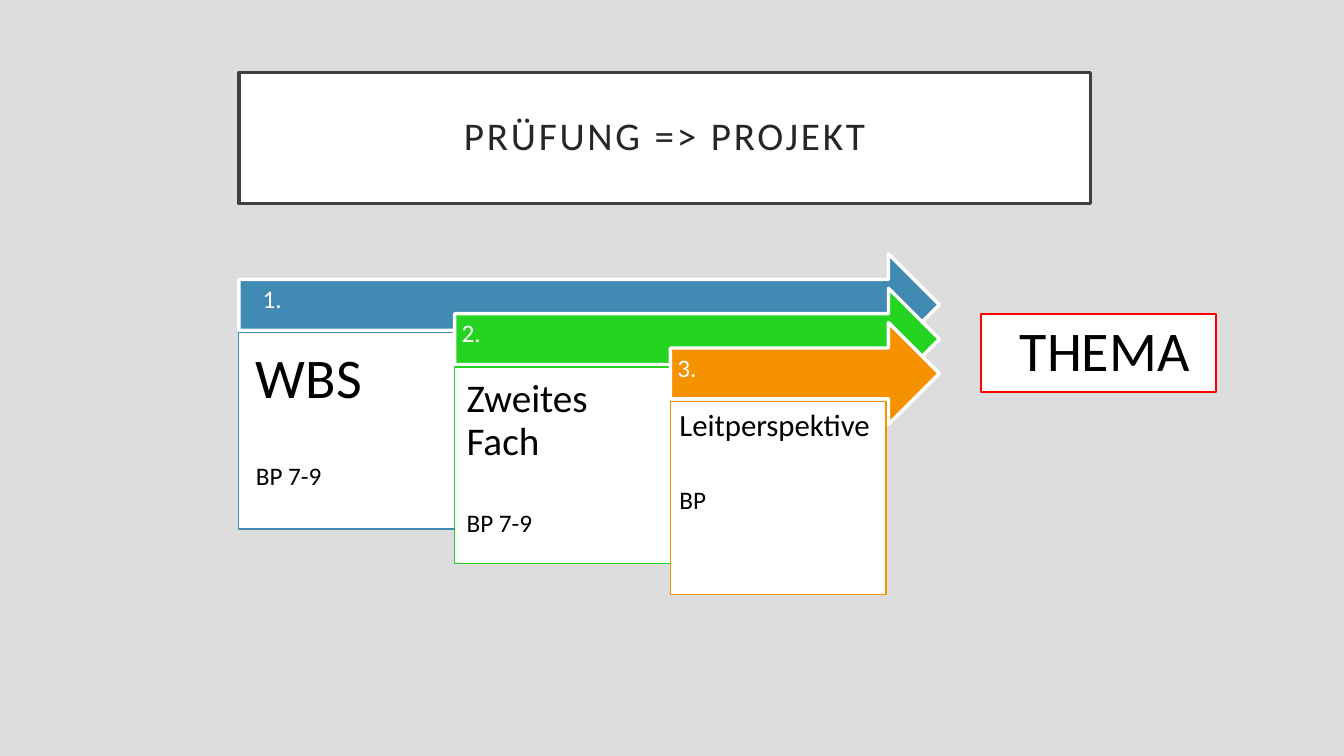
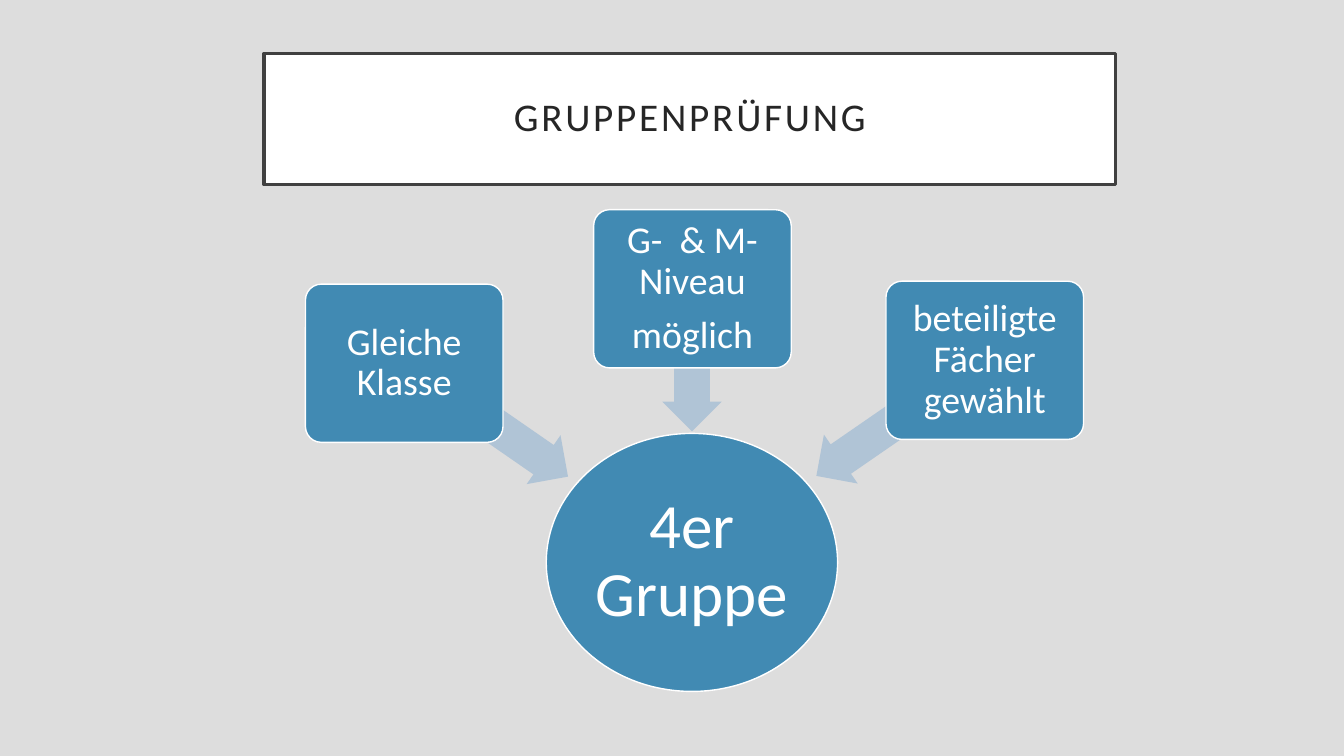
"""Build two slides about a school project exam: choosing the topic and forming the group."""
import pptx
import pptx.dml.color
import pptx.enum.shapes
import pptx.enum.text
import pptx.util

Pt = pptx.util.Pt
RGBColor = pptx.dml.color.RGBColor
SHAPE = pptx.enum.shapes.MSO_SHAPE
ALIGN = pptx.enum.text.PP_ALIGN
ANCHOR = pptx.enum.text.MSO_ANCHOR

GREY = RGBColor(0xDD, 0xDD, 0xDD)
WHITE = RGBColor(0xFF, 0xFF, 0xFF)
BLACK = RGBColor(0x00, 0x00, 0x00)
FRAME = RGBColor(0x40, 0x40, 0x40)
INK = RGBColor(0x26, 0x26, 0x26)
BLUE = RGBColor(0x41, 0x8A, 0xB3)
GREEN = RGBColor(0x25, 0xD4, 0x21)
ORANGE = RGBColor(0xF6, 0x92, 0x00)
RED = RGBColor(0xFF, 0x00, 0x00)
PALE_BLUE = RGBColor(0xB0, 0xC4, 0xD6)

FONT = "Calibri"
PARAGRAPH_GAP = 0.35


def add_block(page, kind, area, fill, line=None, line_width=1, adjustments=()):
    """Add a flat shape with the given fill and outline."""
    block = page.shapes.add_shape(kind, *map(Pt, area))
    block.shadow.inherit = False
    block.fill.solid()
    block.fill.fore_color.rgb = fill
    if line is None:
        block.line.fill.background()
    else:
        block.line.color.rgb = line
        block.line.width = Pt(line_width)
    for index, value in enumerate(adjustments):
        block.adjustments[index] = value
    return block


def write(block, lines, color, insets, align=ALIGN.CENTER, anchor=ANCHOR.MIDDLE, tracking=None):
    """Write (text, size, space before) lines into a shape; insets run left, top, right, bottom."""
    frame = block.text_frame
    left, top, right, bottom = map(Pt, insets)
    frame_format = {
        "word_wrap": True, "vertical_anchor": anchor, "margin_left": left,
        "margin_top": top, "margin_right": right, "margin_bottom": bottom,
    }
    for name, value in frame_format.items():
        setattr(frame, name, value)
    for index, (text, size, gap) in enumerate(lines):
        para = frame.add_paragraph() if index else frame.paragraphs[0]
        para_format = {"alignment": align, "line_spacing": 0.9, "space_before": Pt(gap)}
        for name, value in para_format.items():
            setattr(para, name, value)
        span = para.add_run()
        span.text = text
        span.font.color.rgb = color
        for name, value in {"name": FONT, "size": Pt(size)}.items():
            setattr(span.font, name, value)
        if tracking:
            span.font._element.set("spc", str(tracking))


deck = pptx.Presentation()
deck.slide_width, deck.slide_height = Pt(960), Pt(540)

pages = []
for title, left, top in [("PRÜFUNG => PROJEKT", 170.6, 51.8), ("GRUPPENPRÜFUNG", 188.6, 38.2)]:
    page = deck.slides.add_slide(deck.slide_layouts[6])
    page.background.fill.solid()
    page.background.fill.fore_color.rgb = GREY
    box = add_block(page, SHAPE.RECTANGLE, (left, top, 608.4, 93.6), WHITE, FRAME, 2.5)
    write(box, [(title, 28, 0)], INK, [14.4] * 4, tracking=200)
    pages.append(page)
topic_page, group_page = pages

STEP_LEFT, STEP_TOP, STEP_WIDTH, STEP_DROP = 170.6, 181.4, 154.1, 24.5
ARROW_END, ARROW_HEIGHT, CARD_OFFSET = 671, 72.7, 56.2
steps = [
    ("WBS", 40, "BP 7-9", BLUE, 140.4, 12.2, 17),
    ("Zweites Fach", 28, "BP 7-9", GREEN, 140.4, 8.6, 5),
    ("Leitperspektive", 22, "BP", ORANGE, 138.2, 6.5, 5),
]
for index, (subject, size, plan, color, card_height, inset, indent) in enumerate(steps):
    left = STEP_LEFT + index * STEP_WIDTH
    top = STEP_TOP + index * STEP_DROP
    arrow_area = (left, top, ARROW_END - left, ARROW_HEIGHT)
    arrow = add_block(topic_page, SHAPE.RIGHT_ARROW, arrow_area, color, WHITE, 2.5)
    write(arrow, [(f"{index + 1}.", 18, 0)], WHITE, (indent, 5, 20, 11.5), ALIGN.LEFT)
    card_area = (left, top + CARD_OFFSET, STEP_WIDTH, card_height)
    card = add_block(topic_page, SHAPE.RECTANGLE, card_area, WHITE, color)
    card_lines = [(subject, size, 0), (plan, 18, 24 + PARAGRAPH_GAP * size)]
    write(card, card_lines, BLACK, [inset] * 4, ALIGN.LEFT, ANCHOR.TOP)

topic = add_block(topic_page, SHAPE.RECTANGLE, (700.6, 224.6, 167.8, 55.4), WHITE, RED, 1.5)
write(topic, [("THEMA", 40, 0)], BLACK, (16.2, 3.6, 7.2, 3.6))

hub = add_block(group_page, SHAPE.OVAL, (390.2, 309.6, 208.1, 184.3), BLUE, WHITE)
write(hub, [("4er Gruppe", 45, 0)], WHITE, [2.2] * 4)

conditions = [
    (["Gleiche Klasse"], 218.2, 203, (275.8, 278.6, 142.6), 214.7),
    (["G-  & M- Niveau", "möglich"], 424.1, 149.8, (445.7, 238.3, 97.2), 270),
    (["beteiligte Fächer gewählt"], 632.9, 200.9, (570.2, 277.2, 146.2), 325.4),
]
for texts, left, top, (arrow_left, arrow_top, arrow_width), angle in conditions:
    arrow_area = (arrow_left, arrow_top, arrow_width, 42.5)
    arrow = add_block(group_page, SHAPE.LEFT_ARROW, arrow_area, PALE_BLUE, adjustments=(0.6, 0.5))
    arrow.rotation = angle
    card_area = (left, top, 141.1, 113)
    card = add_block(group_page, SHAPE.ROUNDED_RECTANGLE, card_area, BLUE, WHITE, adjustments=(0.1,))
    card_lines = [(text, 27, PARAGRAPH_GAP * 27 * min(row, 1)) for row, text in enumerate(texts)]
    write(card, card_lines, WHITE, [4.3] * 4)

deck.save("out.pptx")
